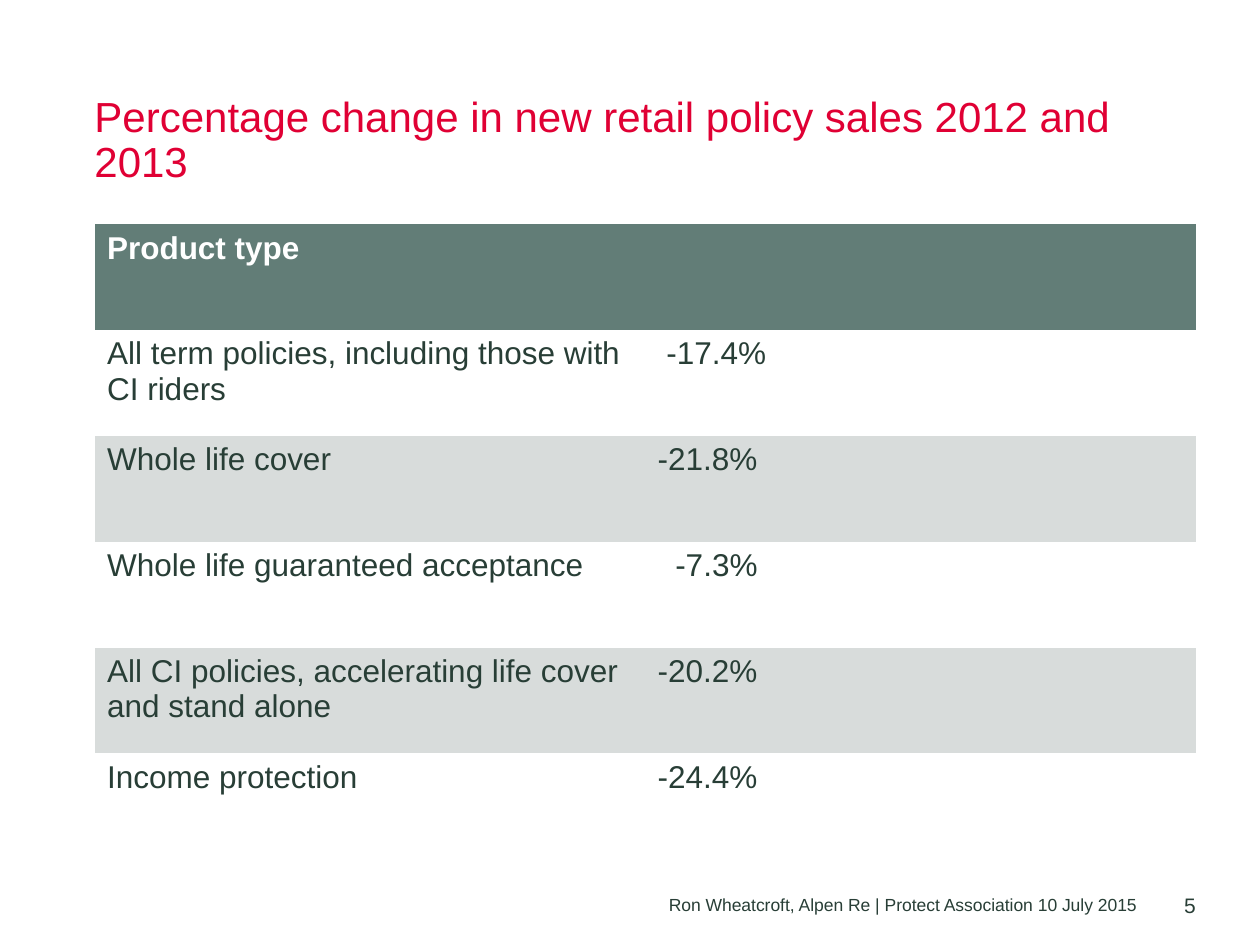
"""Build the slide on percentage change in new retail policy sales."""
from pptx import Presentation
from pptx.dml.color import RGBColor
from pptx.enum.text import MSO_ANCHOR, PP_ALIGN
from pptx.oxml.ns import qn
from pptx.util import Inches, Pt

RED = RGBColor(0xE0, 0x00, 0x34)
DARK = RGBColor(0x28, 0x3E, 0x36)
GREEN = RGBColor(0x62, 0x7D, 0x77)
GREY = RGBColor(0xD8, 0xDC, 0xDB)
WHITE = RGBColor(0xFF, 0xFF, 0xFF)
NO_STYLE = "{2D5ABB26-0587-4C30-8999-92F81FD0307C}"


def style(p, size, color, bold=False):
    for r in p.runs:
        r.font.name = "Arial"
        r.font.size = Pt(size)
        r.font.bold = bold
        r.font.color.rgb = color


def add_text(s, box, text, size, color, align, anchor, wrap):
    tf = s.shapes.add_textbox(*map(Inches, box)).text_frame
    tf.margin_left = tf.margin_right = tf.margin_top = tf.margin_bottom = 0
    tf.word_wrap = wrap
    tf.vertical_anchor = anchor
    tf.text = text
    p = tf.paragraphs[0]
    p.alignment = align
    style(p, size, color)
    return p


prs = Presentation()
prs.slide_width, prs.slide_height = Inches(10), Inches(7.5)
s = prs.slides.add_slide(prs.slide_layouts[6])

add_text(s, (2.56, 7.11, 6.46, 0.15),
         "Ron Wheatcroft, Alpen Re | Protect Association 10 July 2015",
         10, DARK, PP_ALIGN.RIGHT, MSO_ANCHOR.BOTTOM, False)

rows = [
    ("Product type", "", 0),
    ("All term policies, including those with CI riders", "-17.4%", 0.07),
    ("Whole life cover", "-21.8%", 0),
    ("Whole life guaranteed acceptance", "-7.3%", 0.14),
    ("All CI policies, accelerating life cover and stand alone", "-20.2%", 0),
    ("Income protection", "-24.4%", 0),
]
table = s.shapes.add_table(len(rows), 2, Inches(0.75), Inches(1.78),
                           Inches(8.74), Inches(5.04)).table
table.horz_banding = False
table._tbl.tblPr.find(qn("a:tableStyleId")).text = NO_STYLE
for i, (product, change, indent) in enumerate(rows):
    for j, text in enumerate((product, change)):
        cell = table.cell(i, j)
        cell.text = text
        cell.margin_left = Inches(0.1 + indent * j)
        style(cell.text_frame.paragraphs[0], 18, DARK if i else WHITE, i == 0)
        if i % 2:
            cell.fill.background()
        else:
            cell.fill.solid()
            cell.fill.fore_color.rgb = GREY if i else GREEN

title = add_text(s, (0.75, 0.76, 8.74, 1.18),
                 "Percentage change in new retail policy sales 2012 and 2013",
                 24, RED, PP_ALIGN.LEFT, MSO_ANCHOR.TOP, True)
title.line_spacing = 0.9

add_text(s, (9.25, 7.08, 0.24, 0.2), "5", 12, DARK,
         PP_ALIGN.RIGHT, MSO_ANCHOR.BOTTOM, False)

prs.save("out.pptx")
